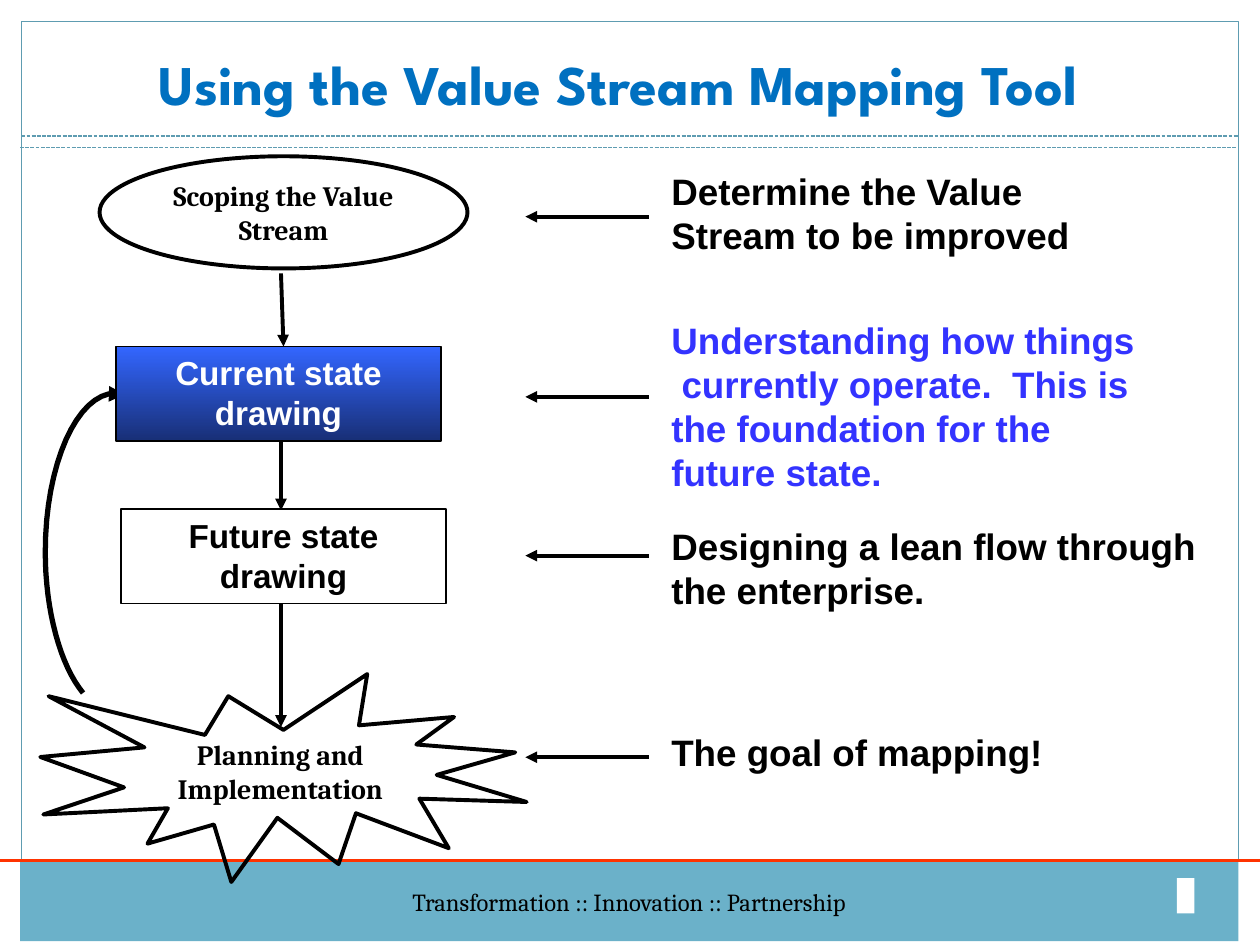
from lxml.etree import SubElement
from pptx import Presentation
from pptx.dml.color import RGBColor
from pptx.enum.dml import MSO_LINE
from pptx.enum.shapes import MSO_CONNECTOR, MSO_SHAPE
from pptx.enum.text import MSO_ANCHOR, MSO_AUTO_SIZE, PP_ALIGN
from pptx.oxml.ns import qn
from pptx.util import Inches, Pt

WIDTH, HEIGHT = 10, 7.5
BLACK, WHITE, TEAL, BORDER = "000000", "FFFFFF", "6BB1C9", "5E9CB1"
RED, BLUE, TITLE_BLUE = "FF3300", "3333FF", "0070C0"
GRADIENT = ("3366FF", "182F76")

TITLE = "Using the Value Stream Mapping Tool"
FOOTER = "Transformation :: Innovation :: Partnership"

SERIF = dict(name="Cambria", size=Pt(16), bold=True)
SANS = dict(name="Arial", size=Pt(19), bold=True)
NOTE = dict(name="Arial", size=Pt(21), bold=True)
FOOTER_FONT = dict(name="Cambria", size=Pt(14), bold=False)
TITLE_FONT = dict(name="League Spartan", size=Pt(32), bold=True)

RULES = [
    ((0.16, 1.17), (9.82, 1.17), BORDER, 0.75, True),
    ((0.17, 1.08), (9.83, 1.08), BORDER, 0.75, True),
    ((0, 6.83), (WIDTH, 6.83), RED, 2, False),
]
STEP_ARROWS = [
    ((2.23, 2.17), (2.25, 2.75)),
    ((2.23, 3.43), (2.23, 4.05)),
    ((2.23, 4.72), (2.23, 5.77)),
]
NOTE_LEFT, ARROW_START, ARROW_END = 5.23, 5.15, 4.17
NOTES = [
    ("Determine the Value Stream to be improved", 1.29, 3.96, 0.81, BLACK, 1.72),
    ("Understanding how things  currently operate.  This is the foundation for the future state.",
     2.47, 3.91, 1.51, BLUE, 3.15),
    ("Designing a lean flow through the enterprise.", 4.11, 4.57, 0.81, BLACK, 4.41),
    ("The goal of mapping!", 5.74, 4.57, 0.46, BLACK, 6.01),
]
STEPS = [
    ("Scoping the Value Stream", MSO_SHAPE.OVAL, (0.79, 1.24, 2.92, 0.89), None, 2.25, SERIF, BLACK),
    ("Current state drawing", MSO_SHAPE.RECTANGLE, (0.92, 2.75, 2.58, 0.75), GRADIENT, 1, SANS, WHITE),
    ("Future state drawing", MSO_SHAPE.RECTANGLE, (0.96, 4.04, 2.58, 0.75), WHITE, 1, SANS, BLACK),
    ("Planning and Implementation", MSO_SHAPE.EXPLOSION1, (0.32, 5.35, 3.86, 1.65), None, 2.25, SERIF, BLACK),
]
LOOP_CURVES = [
    ((0.66, 5.5), (0.48, 5.28), (0.36, 4.85), (0.36, 4.38)),
    ((0.36, 4.38), (0.36, 3.69), (0.61, 3.12), (0.92, 3.12)),
    ((0.92, 3.12), (0.94, 3.12), (0.97, 3.12), (0.99, 3.13)),
]
CURVE_STEPS = (16, 16, 1)


def color(value):
    return RGBColor.from_string(value)


def style_line(line, value, width, dashed=False):
    line.color.rgb = color(value)
    line.width = Pt(width)
    if dashed:
        line.dash_style = MSO_LINE.SQUARE_DOT


def add_arrowhead(line):
    SubElement(line._get_or_add_ln(), qn("a:tailEnd"), type="triangle")


def fill_shape(shape, value):
    if value is None:
        shape.fill.background()
    elif isinstance(value, tuple):
        shape.fill.gradient()
        shape.fill.gradient_angle = 270
        for position, (stop, shade) in enumerate(zip(shape.fill.gradient_stops, value)):
            stop.position = position
            stop.color.rgb = color(shade)
    else:
        shape.fill.solid()
        shape.fill.fore_color.rgb = color(value)


def write(shape, text, font, value, anchor=MSO_ANCHOR.TOP, align=PP_ALIGN.CENTER, wrap=True):
    frame = shape.text_frame
    frame.text = text
    settings = dict(word_wrap=wrap, auto_size=MSO_AUTO_SIZE.NONE, vertical_anchor=anchor)
    for name, setting in settings.items():
        setattr(frame, name, setting)
    paragraph = frame.paragraphs[0]
    paragraph.alignment = align
    for name, setting in font.items():
        setattr(paragraph.runs[0].font, name, setting)
    paragraph.runs[0].font.color.rgb = color(value)


def add_box(slide, kind, box, fill=None, border=None, width=1):
    shape = slide.shapes.add_shape(kind, *map(Inches, box))
    shape.shadow.inherit = False
    fill_shape(shape, fill)
    if border:
        style_line(shape.line, border, width)
    else:
        shape.line.fill.background()
    return shape


def add_line(slide, start, end, value=BLACK, width=2.25, dashed=False, arrow=False):
    connector = slide.shapes.add_connector(MSO_CONNECTOR.STRAIGHT, *map(Inches, start + end))
    style_line(connector.line, value, width, dashed)
    if arrow:
        add_arrowhead(connector.line)
    SubElement(connector._element.spPr, qn("a:effectLst"))


def curve_point(curve, t):
    weights = ((1 - t) ** 3, 3 * t * (1 - t) ** 2, 3 * t * t * (1 - t), t ** 3)
    return tuple(Inches(sum(w * p[axis] for w, p in zip(weights, curve))) for axis in (0, 1))


def add_loop(slide):
    points = [curve_point(curve, step / count)
              for curve, count in zip(LOOP_CURVES, CURVE_STEPS)
              for step in range(1, count + 1)]
    builder = slide.shapes.build_freeform(*curve_point(LOOP_CURVES[0], 0))
    builder.add_line_segments(points, close=False)
    loop = builder.convert_to_shape()
    loop.shadow.inherit = False
    loop.fill.background()
    style_line(loop.line, BLACK, 3)
    add_arrowhead(loop.line)


def main():
    presentation = Presentation()
    presentation.slide_width, presentation.slide_height = Inches(WIDTH), Inches(HEIGHT)
    slide = presentation.slides.add_slide(presentation.slide_layouts[5])

    title = slide.shapes.title
    title.left, title.top, title.width, title.height = map(Inches, (0.66, 0.5, 8.5, 0.48))
    write(title, TITLE, TITLE_FONT, TITLE_BLUE, MSO_ANCHOR.BOTTOM)

    footer = add_box(slide, MSO_SHAPE.RECTANGLE, (0.16, 6.84, 9.67, 0.63), TEAL)
    write(footer, FOOTER, FOOTER_FONT, BLACK, MSO_ANCHOR.MIDDLE, wrap=False)
    add_box(slide, MSO_SHAPE.RECTANGLE, (0.17, 0.17, 9.66, 6.67), None, BORDER, 0.75)
    add_box(slide, MSO_SHAPE.RECTANGLE, (9.34, 6.97, 0.14, 0.28), WHITE)
    for rule in RULES:
        add_line(slide, *rule)

    for start, end in STEP_ARROWS:
        add_line(slide, start, end, arrow=True)
    for text, top, width, height, value, arrow_y in NOTES:
        note = slide.shapes.add_textbox(*map(Inches, (NOTE_LEFT, top, width, height)))
        write(note, text, NOTE, value, align=PP_ALIGN.LEFT)
        add_line(slide, (ARROW_START, arrow_y), (ARROW_END, arrow_y), arrow=True)

    add_loop(slide)
    for text, kind, box, fill, width, font, value in STEPS:
        step = add_box(slide, kind, box, fill, BLACK, width)
        anchor = MSO_ANCHOR.TOP if kind == MSO_SHAPE.RECTANGLE else MSO_ANCHOR.MIDDLE
        write(step, text, font, value, anchor)

    presentation.save("out.pptx")


if __name__ == "__main__":
    main()
